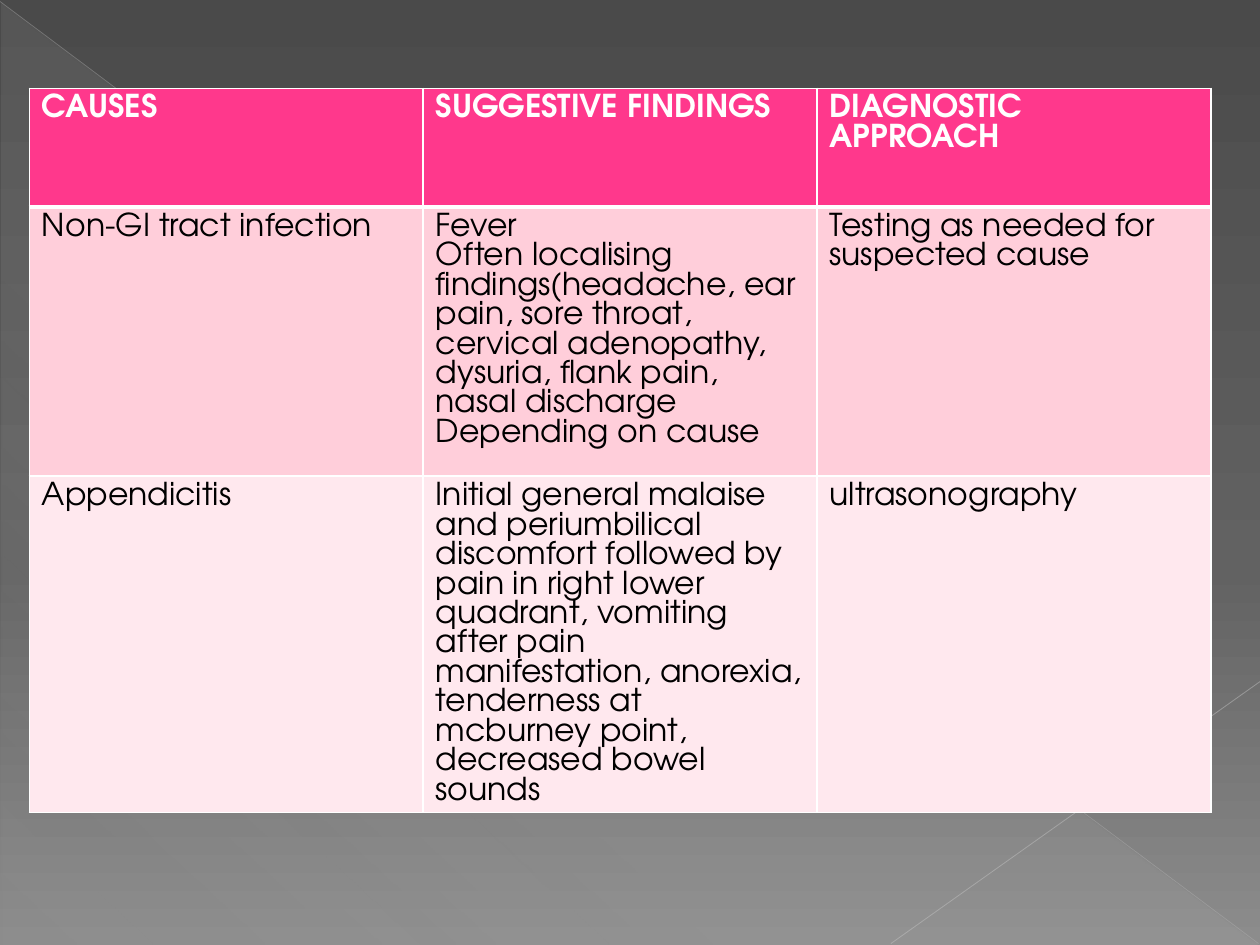
from dataclasses import dataclass

from lxml import etree
from pptx import Presentation
from pptx import util as u
from pptx.dml.color import RGBColor
from pptx.enum import shapes
from pptx.oxml.ns import qn

FONT = "TeX Gyre Adventor"
COLORS = {
    "header": "FF388C",
    "odd_row": "FFCEDA",
    "even_row": "FFE8EE",
    "border": "FFFFFF",
    "header_text": "FFFFFF",
    "body_text": "000000",
    "backdrop_top": "4A4A4A",
    "backdrop_middle": "626262",
    "backdrop_bottom": "8C8C8C",
    "sheen": "D2D2D2",
    "long_line": "BFBFBF",
    "short_line": "C6C6C6",
}


@dataclass
class Stop:
    position: int
    color: str
    opacity: int = 100


@dataclass
class DecorLine:
    start: tuple[float, float]
    end: tuple[float, float]
    color: str
    width: float
    opacity: int


@dataclass
class TableRow:
    height: float
    fill: str
    text_color: str
    bold: bool
    top_border: float
    bottom_border: float
    cells: list[str]


BACKDROP = [Stop(0, "backdrop_top"), Stop(60, "backdrop_middle"), Stop(100, "backdrop_bottom")]
SHEEN = [Stop(0, "sheen", 10), Stop(70, "sheen", 8), Stop(100, "sheen", 1)]

DECOR_LINES = [
    DecorLine((0, 0.03), (25.37, 19.02), "long_line", 0.39, 35),
    DecorLine((25.4, 13.74), (17.96, 19.02), "short_line", 0.47, 45),
]

ROWS = [
    TableRow(2.39, "header", "header_text", True, 1, 3,
             ["CAUSES", "SUGGESTIVE FINDINGS", "DIAGNOSTIC APPROACH"]),
    TableRow(5.43, "odd_row", "body_text", False, 3, 1, [
        "Non-GI tract infection",
        "Fever\n"
        "Often localising findings(headache, ear pain, sore throat, cervical adenopathy, "
        "dysuria, flank pain, nasal discharge\n"
        "Depending on cause",
        "Testing as needed for suspected cause",
    ]),
    TableRow(5.43, "even_row", "body_text", False, 1, 1, [
        "Appendicitis",
        "Initial general malaise and periumbilical discomfort followed by pain in right "
        "lower quadrant, vomiting after pain manifestation, anorexia, tenderness at "
        "mcburney point, decreased bowel sounds",
        "ultrasonography",
    ]),
]


def rgb(name: str) -> RGBColor:
    return RGBColor.from_string(COLORS[name])


def add_color(parent, name: str, opacity: int = 100) -> None:
    color = etree.SubElement(parent, qn("a:srgbClr"), val=COLORS[name])
    if opacity < 100:
        etree.SubElement(color, qn("a:alpha"), val=str(opacity * 1000))


def set_gradient(fill, owner, stops: list[Stop], angle: int) -> None:
    """Fill with a linear gradient; owner is the element that holds the fill."""
    fill.gradient()
    gradient = next(owner.iter(qn("a:gradFill")))
    for child in list(gradient):
        gradient.remove(child)
    stop_list = etree.SubElement(gradient, qn("a:gsLst"))
    for stop in stops:
        entry = etree.SubElement(stop_list, qn("a:gs"), pos=str(stop.position * 1000))
        add_color(entry, stop.color, stop.opacity)
    etree.SubElement(gradient, qn("a:lin"), ang=str(angle * 60000), scaled="0")


def add_sheen(slide) -> None:
    sheen = slide.shapes.add_shape(shapes.MSO_SHAPE.RIGHT_TRIANGLE,
                                   u.Cm(0.03), u.Cm(0.05), u.Cm(25.35), u.Cm(19))
    sheen.shadow.inherit = False
    sheen.line.fill.background()
    set_gradient(sheen.fill, sheen.element.spPr, SHEEN, 133)


def add_decor_line(slide, decor: DecorLine) -> None:
    ends = [u.Cm(value) for value in decor.start + decor.end]
    connector = slide.shapes.add_connector(shapes.MSO_CONNECTOR.STRAIGHT, *ends)
    connector.line.width = u.Pt(decor.width)
    connector.line.color.rgb = rgb(decor.color)
    properties = connector.element.spPr
    color = next(properties.iter(qn("a:srgbClr")))
    etree.SubElement(color, qn("a:alpha"), val=str(decor.opacity * 1000))
    etree.SubElement(properties, qn("a:effectLst"))


def set_borders(cell, top: float, bottom: float) -> None:
    properties = cell._tc.get_or_add_tcPr()
    widths = {"a:lnL": 1, "a:lnR": 1, "a:lnT": top, "a:lnB": bottom}
    for index, (side, width) in enumerate(widths.items()):
        border = etree.Element(qn(side), w=str(u.Pt(width)))
        add_color(etree.SubElement(border, qn("a:solidFill")), "border")
        properties.insert(index, border)


def fill_cell(cell, content: str, row: TableRow) -> None:
    cell.text = content
    cell.fill.solid()
    cell.fill.fore_color.rgb = rgb(row.fill)
    set_borders(cell, row.top_border, row.bottom_border)
    for paragraph in cell.text_frame.paragraphs:
        paragraph.font.name = FONT
        paragraph.font.size = u.Pt(18)
        paragraph.font.bold = row.bold
        paragraph.font.color.rgb = rgb(row.text_color)


def add_causes_table(slide) -> None:
    column_count = len(ROWS[0].cells)
    height = sum(row.height for row in ROWS)
    causes = slide.shapes.add_table(len(ROWS), column_count, u.Cm(0.59), u.Cm(1.78),
                                    u.Cm(23.82), u.Cm(height)).table
    for row_index, row in enumerate(ROWS):
        causes.rows[row_index].height = u.Cm(row.height)
        for column_index, content in enumerate(row.cells):
            fill_cell(causes.cell(row_index, column_index), content, row)


def main() -> None:
    presentation = Presentation()
    presentation.slide_width = u.Cm(25.4)
    presentation.slide_height = u.Cm(19.05)
    slide = presentation.slides.add_slide(presentation.slide_layouts[6])
    set_gradient(slide.background.fill, slide.element, BACKDROP, 90)
    add_sheen(slide)
    for decor in DECOR_LINES:
        add_decor_line(slide, decor)
    add_causes_table(slide)
    presentation.save("out.pptx")


if __name__ == "__main__":
    main()
